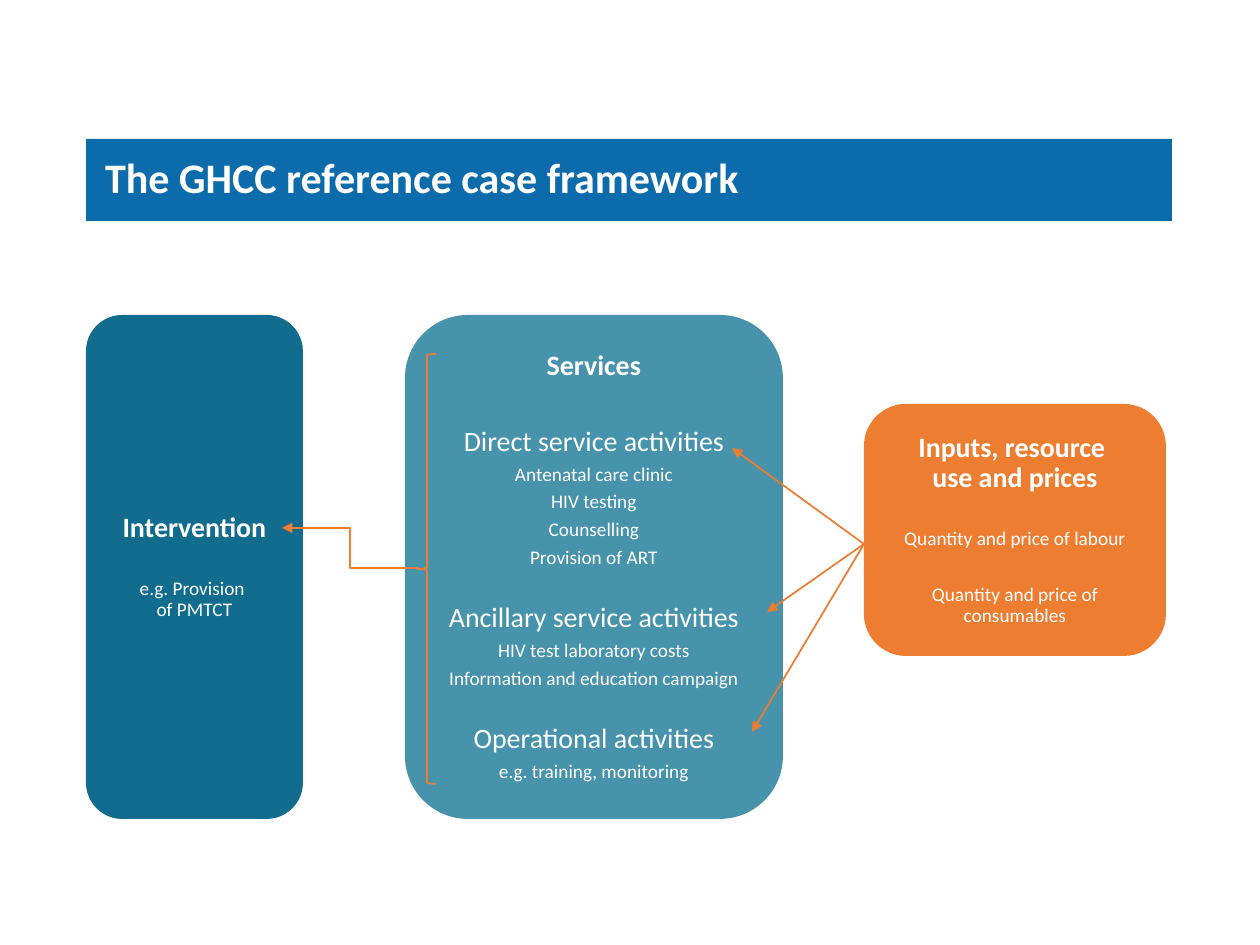
from dataclasses import dataclass

from lxml import etree
from pptx import Presentation
from pptx.dml.color import RGBColor
from pptx.enum.shapes import MSO_CONNECTOR, MSO_SHAPE
from pptx.enum.text import MSO_ANCHOR, MSO_AUTO_SIZE, PP_ALIGN
from pptx.oxml.ns import qn
from pptx.util import Pt

ROUNDED = MSO_SHAPE.ROUNDED_RECTANGLE
BRACE = MSO_SHAPE.LEFT_BRACE
STRAIGHT, ELBOW = MSO_CONNECTOR.STRAIGHT, MSO_CONNECTOR.ELBOW
MIDDLE = MSO_ANCHOR.MIDDLE
LEFT, CENTER = PP_ALIGN.LEFT, PP_ALIGN.CENTER
NO_AUTOFIT = MSO_AUTO_SIZE.NONE

EMU_PER_PX = 914400 / 126
TITLE_ONLY = 5


def px(length):
    return round(length * EMU_PER_PX)


@dataclass(frozen=True)
class Theme:
    font: str = "Calibri"
    white: str = "FFFFFF"
    banner: str = "0C6BAB"
    intervention: str = "116C8E"
    services: str = "4693AB"
    accent: str = "ED7D31"
    title_size: int = 24
    heading_size: int = 16
    detail_size: int = 11
    line_spacing: float = 0.9
    line_gap: int = 4
    group_gap: int = 20
    heading_gap: int = 26
    stroke: int = 1


class SlideBuilder:
    def __init__(self, page, theme):
        self.page = page
        self.theme = theme

    def fill(self, shape, color):
        shape.fill.solid()
        shape.fill.fore_color.rgb = RGBColor.from_string(color)

    def stroke(self, shape):
        shape.line.color.rgb = RGBColor.from_string(self.theme.accent)
        shape.line.width = Pt(self.theme.stroke)

    def frame(self, shape, insets):
        frame = shape.text_frame
        frame.word_wrap = True
        frame.auto_size = NO_AUTOFIT
        frame.vertical_anchor = MIDDLE
        (frame.margin_left, frame.margin_top,
         frame.margin_right, frame.margin_bottom) = map(px, insets)
        return frame

    def paragraph(self, para, text, size, bold, align, gap=0):
        para.text = text
        para.alignment = align
        para.line_spacing = self.theme.line_spacing
        para.space_before = Pt(gap)
        for span in para.runs:
            span.font.name = self.theme.font
            span.font.size = Pt(size)
            span.font.bold = bold
            span.font.color.rgb = RGBColor.from_string(self.theme.white)

    def title(self, text, left, top, width, height):
        banner = self.page.shapes.title
        banner.left, banner.top = px(left), px(top)
        banner.width, banner.height = px(width), px(height)
        self.fill(banner, self.theme.banner)
        frame = self.frame(banner, (19, 13, 13, 13))
        self.paragraph(frame.paragraphs[0], text, self.theme.title_size,
                       True, LEFT)

    def card(self, color, lines, left, top, width, height):
        """Each line is (text, size, bold, gap before in points)."""
        card = self.page.shapes.add_shape(
            ROUNDED, px(left), px(top), px(width), px(height))
        card.shadow.inherit = False
        self.fill(card, color)
        card.line.fill.background()
        frame = self.frame(card, (13, 6, 13, 6))
        for index, (text, size, bold, gap) in enumerate(lines):
            para = frame.add_paragraph() if index else frame.paragraphs[0]
            self.paragraph(para, text, size, bold, CENTER, gap)

    def brace(self, left, top, width, height):
        brace = self.page.shapes.add_shape(
            BRACE, px(left), px(top), px(width), px(height))
        brace.shadow.inherit = False
        brace.adjustments[0], brace.adjustments[1] = 0.08, 0.5
        brace.fill.background()
        self.stroke(brace)

    def arrow(self, kind, start, end):
        arrow = self.page.shapes.add_connector(kind, *map(px, start + end))
        self.stroke(arrow)
        properties = arrow._element.spPr
        outline = properties.find(qn("a:ln"))
        etree.SubElement(outline, qn("a:tailEnd"), type="triangle")
        etree.SubElement(properties, qn("a:effectLst"))


def main():
    deck = Presentation()
    deck.slide_width, deck.slide_height = px(1260), px(945)
    theme = Theme()
    page = deck.slides.add_slide(deck.slide_layouts[TITLE_ONLY])
    builder = SlideBuilder(page, theme)

    def heading(text, gap=0, bold=True):
        return text, theme.heading_size, bold, gap

    def detail(text, gap=theme.line_gap):
        return text, theme.detail_size, False, gap

    # Title banner
    builder.title("The GHCC reference case framework", 86, 139, 1086, 82)

    # Intervention
    builder.card(theme.intervention, [
        heading("Intervention"),
        detail("e.g. Provision \nof PMTCT", theme.group_gap),
    ], 86, 315, 217, 504)

    # Services, in three groups of activities
    groups = [
        ("Direct service activities", theme.heading_gap,
         ["Antenatal care clinic", "HIV testing", "Counselling",
          "Provision of ART"]),
        ("Ancillary service activities", theme.group_gap,
         ["HIV test laboratory costs", "Information and education campaign"]),
        ("Operational activities", theme.group_gap,
         ["e.g. training, monitoring"]),
    ]
    services = [heading("Services")]
    for name, gap, activities in groups:
        services.append(heading(name, gap, bold=False))
        services.extend(detail(activity) for activity in activities)
    builder.card(theme.services, services, 405, 315, 378, 504)

    # Inputs
    builder.card(theme.accent, [
        heading("Inputs, resource \nuse and prices"),
        detail("Quantity and price of labour", theme.group_gap),
        detail("Quantity and price of consumables", theme.group_gap),
    ], 864, 404, 302, 252)

    # Arrows from the inputs to each group of activities
    for target in [(732, 448), (767, 612), (752, 732)]:
        builder.arrow(STRAIGHT, (864, 544), target)

    # Brace around the services, leading to the intervention
    builder.brace(418, 354, 18, 430)
    builder.arrow(ELBOW, (418, 568), (282, 528))

    deck.save("out.pptx")


if __name__ == "__main__":
    main()
